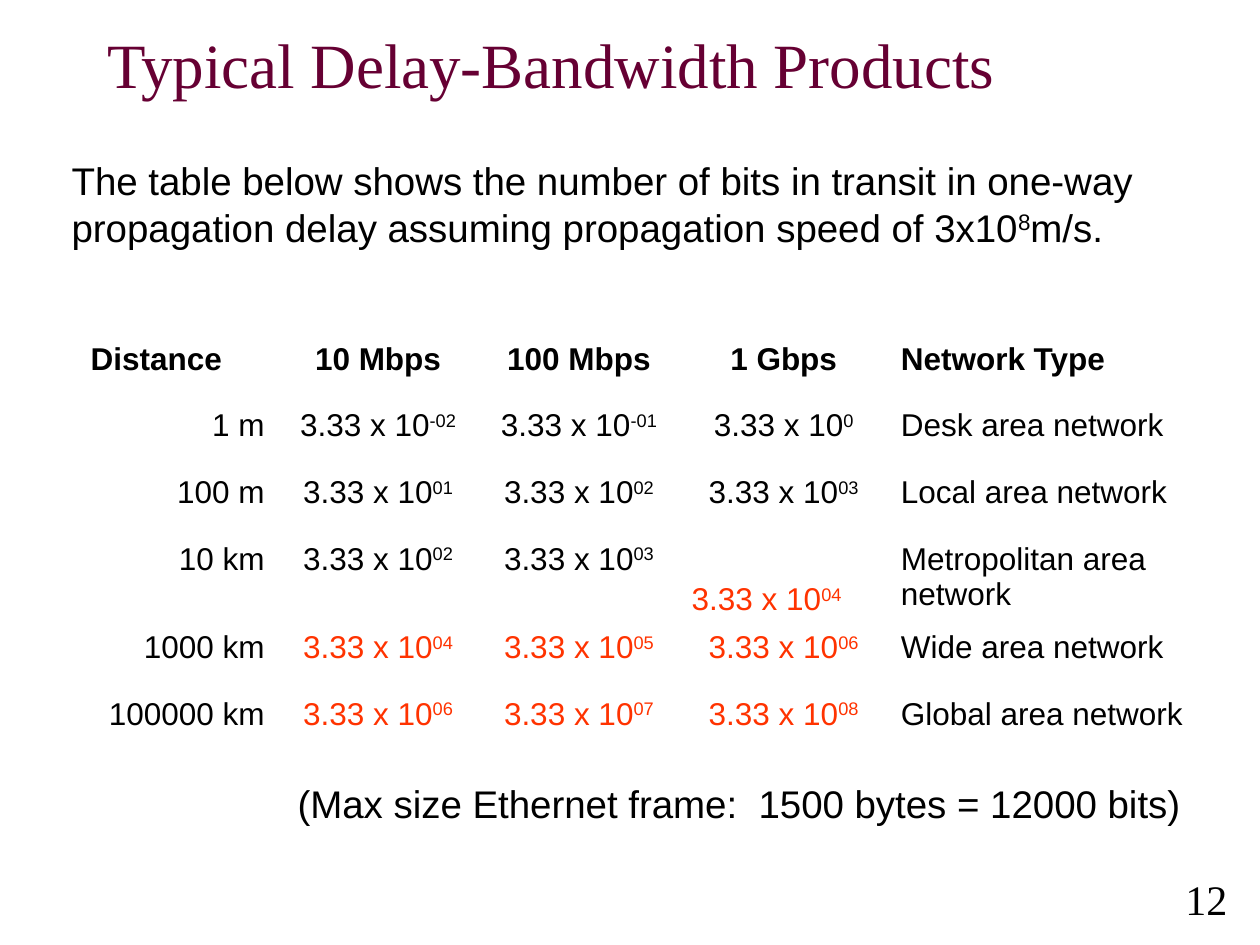
from typing import NamedTuple

from pptx import Presentation
from pptx.dml.color import RGBColor
from pptx.enum.text import MSO_ANCHOR as Anchor, MSO_AUTO_SIZE as AutoSize, PP_ALIGN as Align
from pptx.util import Inches, Pt

BLACK = RGBColor(0x00, 0x00, 0x00)
PLUM = RGBColor(0x66, 0x00, 0x33)
ORANGE = RGBColor(0xFF, 0x33, 0x00)
SANS, SERIF = "Arial", "Times New Roman"

COL_WIDTHS = (1.58, 1.6, 1.59, 1.66, 2.67)
ROW_HEIGHT = 0.53
HEADERS = ("Distance", "10 Mbps", "100 Mbps", "1 Gbps", "Network Type")
HEADER_ALIGN = (Align.LEFT, Align.CENTER, Align.CENTER, Align.CENTER, Align.LEFT)
BODY_ALIGN = (Align.RIGHT,) + HEADER_ALIGN[1:]
FRAME_BITS = 12000


class Box(NamedTuple):
    left: float
    top: float
    width: float
    height: float

    def emu(self) -> list:
        return [Inches(v) for v in self]


class Network(NamedTuple):
    distance: str
    exponents: tuple
    kind: str


NETWORKS = (
    Network("1 m", ("-02", "-01", "0"), "Desk area network"),
    Network("100 m", ("01", "02", "03"), "Local area network"),
    Network("10 km", ("02", "03", "04"), "Metropolitan area network"),
    Network("1000 km", ("04", "05", "06"), "Wide area network"),
    Network("100000 km", ("06", "07", "08"), "Global area network"),
)


def write(tf, text: str, *, size: float, font: str = SANS, color: RGBColor = BLACK,
          bold: bool = False, align: Align = Align.LEFT) -> None:
    """Fill the first paragraph; every second part between ^ marks is superscript."""
    p = tf.paragraphs[0]
    p.alignment = align
    for i, part in enumerate(text.split("^")):
        r = p.add_run()
        r.text = part
        r.font.size, r.font.name, r.font.bold = Pt(size), font, bold
        r.font.color.rgb = color
        if i % 2:
            r._r.get_or_add_rPr().set("baseline", "30000")


def add_text(s, box: Box, text: str, **fmt) -> None:
    tf = s.shapes.add_textbox(*box.emu()).text_frame
    tf.word_wrap = True
    write(tf, text, **fmt)


def add_title(s, box: Box, text: str) -> None:
    sp = s.shapes.title
    sp.left, sp.top, sp.width, sp.height = box.emu()
    tf = sp.text_frame
    tf.auto_size, tf.vertical_anchor = AutoSize.NONE, Anchor.MIDDLE
    write(tf, text, size=36, font=SERIF, color=PLUM)


def fill_cell(cell, text: str, **fmt) -> None:
    cell.fill.background()
    write(cell.text_frame, text, size=18, **fmt)


def add_delay_table(s, left: float, top: float) -> None:
    rows = len(NETWORKS) + 1
    box = Box(left, top, sum(COL_WIDTHS), rows * ROW_HEIGHT)
    table = s.shapes.add_table(rows, len(HEADERS), *box.emu()).table
    table.first_row = table.horz_banding = False
    for col, width in zip(table.columns, COL_WIDTHS):
        col.width = Inches(width)
    for c, (text, align) in enumerate(zip(HEADERS, HEADER_ALIGN)):
        fill_cell(table.cell(0, c), text, bold=True, align=align)

    for r, net in enumerate(NETWORKS, 1):
        fill_cell(table.cell(r, 0), net.distance, align=BODY_ALIGN[0])
        fill_cell(table.cell(r, 4), net.kind, align=BODY_ALIGN[4])
        for c, exponent in enumerate(net.exponents, 1):
            cell = table.cell(r, c)
            # Products larger than one Ethernet frame stand out
            large = 3.33 * 10 ** int(exponent) > FRAME_BITS
            # The first large product sits low and left in its cell
            first_large = (net.distance, c) == ("10 km", 3)
            if first_large:
                cell.vertical_anchor = Anchor.BOTTOM
            fill_cell(cell, f"3.33 x 10^{exponent}", color=ORANGE if large else BLACK,
                      align=Align.LEFT if first_large else BODY_ALIGN[c])


def main() -> None:
    prs = Presentation()
    prs.slide_width, prs.slide_height = Inches(10), Inches(7.5)
    s = prs.slides.add_slide(prs.slide_layouts[5])

    # Title and introduction
    add_title(s, Box(0.75, 0, 8.5, 1), "Typical Delay-Bandwidth Products")
    add_text(s, Box(0.47, 1.2, 9, 0.85),
             "The table below shows the number of bits in transit in one-way propagation "
             "delay assuming propagation speed of 3x10^8^m/s.", size=22)

    # Bits in transit by distance and bandwidth
    add_delay_table(s, 0.62, 2.66)

    # Frame size note and page number
    add_text(s, Box(0.47, 6.14, 9, 0.45),
             "(Max size Ethernet frame:  1500 bytes = 12000 bits)", size=22, align=Align.RIGHT)
    add_text(s, Box(8.59, 6.88, 1.25, 0.51), "12", size=24, font=SERIF, align=Align.RIGHT)

    prs.save("out.pptx")


if __name__ == "__main__":
    main()
